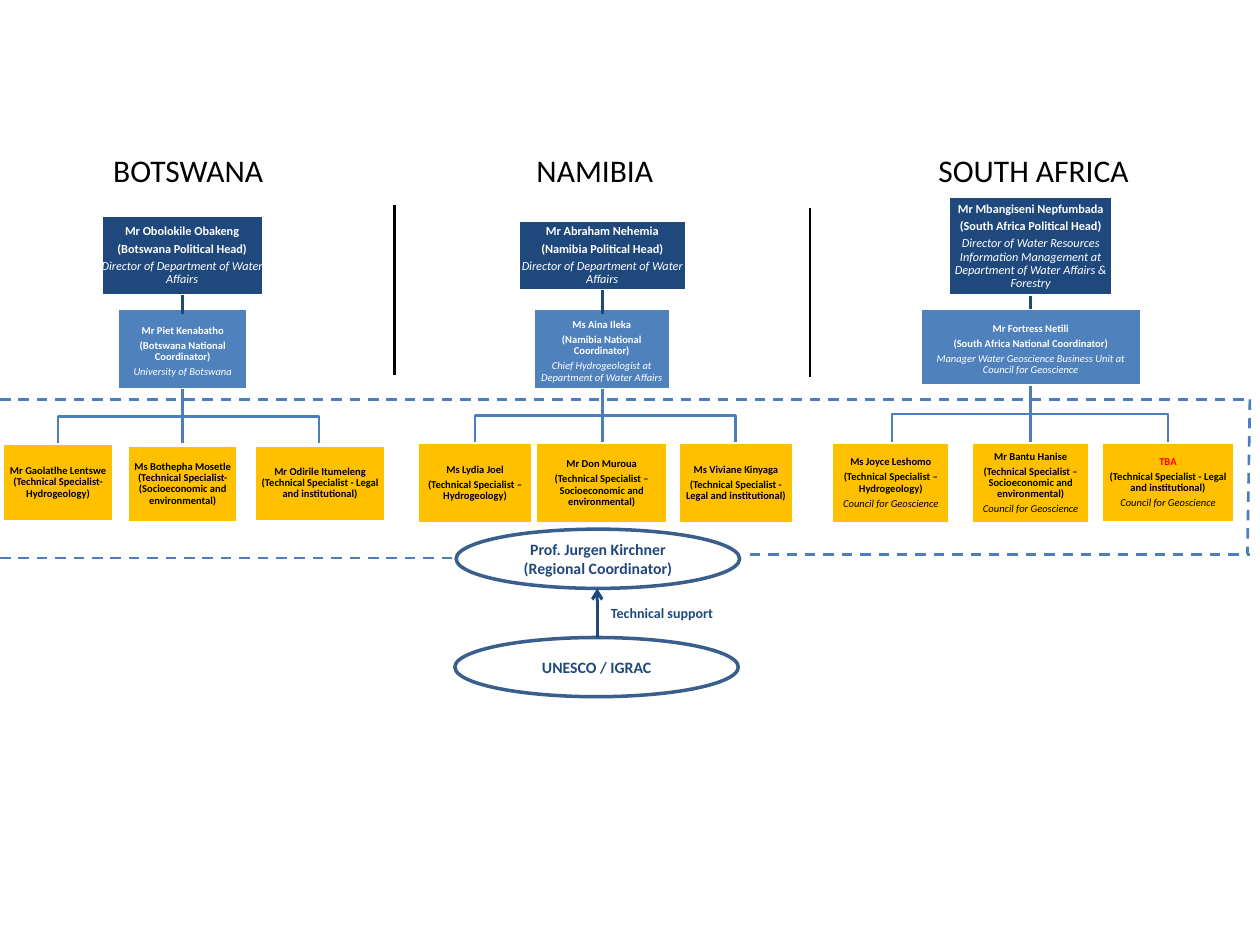
from lxml.etree import SubElement
from pptx import Presentation
from pptx.dml.color import RGBColor
from pptx.enum.dml import MSO_LINE
from pptx.enum.shapes import MSO_CONNECTOR as LINK, MSO_SHAPE as SHAPE
from pptx.enum.text import MSO_ANCHOR as ANCHOR, PP_ALIGN as ALIGN
from pptx.oxml.ns import qn
from pptx.util import Inches, Pt

NAVY, BLUE, AMBER, WHITE, BLACK = "1F497D", "4F81BD", "FFC000", "FFFFFF", "000000"
LINK_BLUE, RING = "4B7EBC", "3A5F8C"


def rgb(code):
    return RGBColor.from_string(code)


def connect(x1, y1, x2, y2, color, width=1.5, kind=LINK.STRAIGHT):
    link = slide.shapes.add_connector(kind, Inches(x1), Inches(y1), Inches(x2), Inches(y2))
    link.line.color.rgb = rgb(color)
    link.line.width = Pt(width)
    SubElement(link._element.spPr, qn("a:effectLst"))
    return link


prs = Presentation()
prs.slide_width, prs.slide_height = Inches(10), Inches(7.5)
slide = prs.slides.add_slide(prs.slide_layouts[6])

for x1, y1, x2, y2 in [(0, 3.17, 9.92, 3.17), (0, 4.43, 3.62, 4.43),
                       (5.95, 4.4, 9.92, 4.4), (9.92, 3.17, 9.9, 4.4)]:
    connect(x1, y1, x2, y2, LINK_BLUE).line.dash_style = MSO_LINE.DASH

for left, top, lines in [(3.62, 4.2, ["Prof. Jurgen Kirchner", "(Regional Coordinator)"]),
                         (3.61, 5.06, ["UNESCO / IGRAC"])]:
    oval = slide.shapes.add_shape(SHAPE.OVAL, Inches(left), Inches(top), Inches(2.25), Inches(0.47))
    oval.shadow.inherit = False
    oval.fill.background()
    oval.line.color.rgb = rgb(RING)
    oval.line.width = Pt(2)
    frame = oval.text_frame
    frame.vertical_anchor = ANCHOR.MIDDLE
    for i, line in enumerate(lines):
        para = frame.add_paragraph() if i else frame.paragraphs[0]
        para.alignment = ALIGN.CENTER
        run = para.add_run()
        run.text = line
        run.font.size, run.font.name, run.font.bold = Pt(9), "Calibri", True
        run.font.color.rgb = rgb(NAVY)

support = connect(4.74, 5.06, 4.74, 4.67, NAVY, 1.75)
SubElement(support.line._get_or_add_ln(), qn("a:tailEnd"), type="arrow")

for left, top, width, height, words, size, color, bold in [
    (4.56, 4.75, 1.39, 0.24, "Technical support", 8, NAVY, True),
    (0.8, 1.15, 1.43, 0.4, "BOTSWANA", 18, BLACK, False),
    (4.16, 1.15, 1.16, 0.4, "NAMIBIA", 18, BLACK, False),
    (7.35, 1.15, 1.76, 0.4, "SOUTH AFRICA", 18, BLACK, False),
]:
    label = slide.shapes.add_textbox(Inches(left), Inches(top), Inches(width), Inches(height))
    label.text_frame.word_wrap = bold
    para = label.text_frame.paragraphs[0]
    para.alignment = ALIGN.CENTER if bold else ALIGN.LEFT
    run = para.add_run()
    run.text = words
    run.font.size, run.font.name, run.font.bold = Pt(size), "Calibri", bold
    run.font.color.rgb = rgb(color)

HYDRO = "(Technical Specialist – Hydrogeology)"
SOCIO = "(Technical Specialist – Socioeconomic and environmental)"
LEGAL = "(Technical Specialist - Legal and institutional)"
COUNCIL = "Council for Geoscience"
WATER = "Director of Department of Water Affairs"

heads = [
    (0.8, 1.71, 1.29, 0.64, ["Mr Obolokile Obakeng", "(Botswana Political Head)", WATER]),
    (4.11, 1.75, 1.34, 0.56, ["Mr Abraham Nehemia", "(Namibia Political Head)", WATER]),
    (7.53, 1.56, 1.3, 0.79, [
        "Mr Mbangiseni Nepfumbada", "(South Africa Political Head)",
        "Director of Water Resources Information Management at "
        "Department of Water Affairs & Forestry"]),
]
coordinators = [
    (0.93, 2.45, 1.04, 0.64, [
        "Mr Piet Kenabatho", "(Botswana National Coordinator)", "University of Botswana"]),
    (4.23, 2.45, 1.09, 0.64, [
        "Ms Aina Ileka", "(Namibia National Coordinator)",
        "Chief Hydrogeologist at Department of Water Affairs"]),
    (7.3, 2.45, 1.76, 0.61, [
        "Mr Fortress Netili", "(South Africa National Coordinator)",
        "Manager Water Geoscience Business Unit at Council for Geoscience"]),
]
specialists = [
    (0.02, 3.52, 0.88, 0.62, ["Mr Gaolatlhe Lentswe (Technical Specialist-Hydrogeology)"]),
    (1.01, 3.53, 0.88, 0.62, [
        "Ms Bothepha Mosetle (Technical Specialist- (Socioeconomic and environmental)"]),
    (2.02, 3.53, 1.04, 0.61, [
        "Mr Odirile Itumeleng (Technical Specialist - Legal and institutional)"]),
    (3.31, 3.51, 0.92, 0.65, ["Ms Lydia Joel", HYDRO]),
    (4.25, 3.51, 1.05, 0.65, ["Mr Don Muroua", SOCIO]),
    (5.38, 3.51, 0.92, 0.65, ["Ms Viviane Kinyaga", LEGAL]),
    (6.6, 3.51, 0.94, 0.65, ["Ms Joyce Leshomo", HYDRO, COUNCIL]),
    (7.71, 3.51, 0.94, 0.65, ["Mr Bantu Hanise", SOCIO, COUNCIL]),
    (8.74, 3.51, 1.06, 0.64, ["TBA", LEGAL, COUNCIL]),
]

for people, fill, color, size, inset in [(heads, NAVY, WHITE, 7, 0),
                                         (coordinators, BLUE, WHITE, 6, 0.04),
                                         (specialists, AMBER, BLACK, 6, 0)]:
    for left, top, width, height, lines in people:
        card = slide.shapes.add_shape(
            SHAPE.RECTANGLE, Inches(left), Inches(top), Inches(width), Inches(height))
        card.shadow.inherit = False
        card.fill.solid()
        card.fill.fore_color.rgb = rgb(fill)
        card.line.color.rgb = rgb(WHITE)
        card.line.width = Pt(2)
        frame = card.text_frame
        frame.word_wrap = True
        frame.vertical_anchor = ANCHOR.MIDDLE
        frame.margin_left = frame.margin_right = frame.margin_top = Inches(inset)
        frame.margin_bottom = 0
        for i, line in enumerate(lines):
            para = frame.add_paragraph() if i else frame.paragraphs[0]
            para.alignment = ALIGN.CENTER
            para.line_spacing = 0.9
            para.space_after = Pt(size * 0.35)
            run = para.add_run()
            run.text = line
            run.font.size, run.font.name = Pt(size), "Calibri"
            run.font.bold, run.font.italic = i < 2, i == 2
            run.font.color.rgb = rgb("FF0000" if line == "TBA" else color)

for center, head_end, team_start, coordinator_end, first, last, team_top in [
    (1.45, 2.34, 2.49, 3.09, 0.46, 2.53, 3.52),
    (4.78, 2.3, 2.49, 3.09, 3.77, 5.84, 3.51),
    (8.18, 2.35, 2.45, 3.06, 7.08, 9.27, 3.51),
]:
    connect(center, head_end, center, team_start, NAVY)
    connect(center, coordinator_end, center, team_top, LINK_BLUE)
    drop = team_top - coordinator_end
    middle = coordinator_end + drop / 2
    for target, turn in [(first, 90), (last, 270)]:
        span = abs(target - center)
        axis = (target + center) / 2
        reach = drop / 2 if turn == 270 else -drop / 2
        branch = connect(axis + reach, middle - span / 2, axis - reach, middle + span / 2,
                         LINK_BLUE, kind=LINK.ELBOW)
        branch._element.spPr.find(qn("a:xfrm")).set("rot", str(turn * 60000))

connect(3.13, 1.63, 3.13, 2.98, BLACK)
connect(6.43, 1.65, 6.43, 2.99, BLACK)

prs.save("out.pptx")
